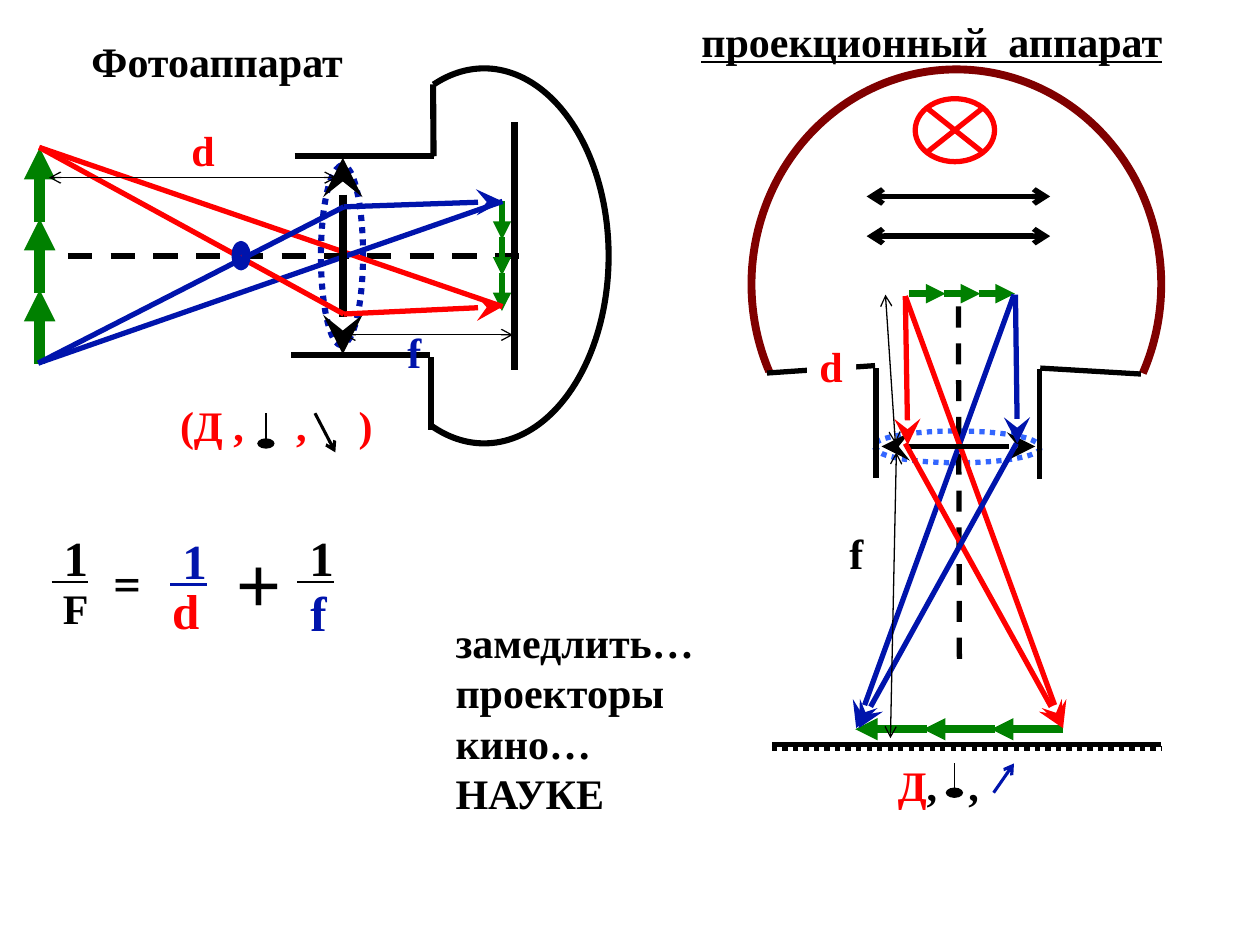
from dataclasses import dataclass
from math import atan2, cos, degrees, radians, sin

from lxml import etree
from pptx import Presentation
from pptx.dml.color import RGBColor
from pptx.enum.dml import MSO_LINE
from pptx.enum.shapes import MSO_CONNECTOR, MSO_SHAPE
from pptx.enum.text import MSO_ANCHOR, MSO_AUTO_SIZE, PP_ALIGN
from pptx.oxml.ns import qn
from pptx.util import Cm, Pt

BLACK = RGBColor(0x00, 0x00, 0x00)
WHITE = RGBColor(0xFF, 0xFF, 0xFF)
RED = RGBColor(0xFF, 0x00, 0x00)
BLUE = RGBColor(0x00, 0x14, 0xAC)
GREEN = RGBColor(0x00, 0x80, 0x00)
MAROON = RGBColor(0x80, 0x00, 0x00)
LIGHT_BLUE = RGBColor(0x33, 0x66, 0xFF)
DASH, DOT = MSO_LINE.DASH, MSO_LINE.ROUND_DOT
STRAIGHT = MSO_CONNECTOR.STRAIGHT
ARC, ELLIPSE = MSO_SHAPE.ARC, MSO_SHAPE.OVAL
LAMP = MSO_SHAPE.FLOWCHART_SUMMING_JUNCTION
TOP, LEFT, NO_AUTOFIT = MSO_ANCHOR.TOP, PP_ALIGN.LEFT, MSO_AUTO_SIZE.NONE

# Arrowheads as (type, width, length)
TRIANGLE = ("triangle", "med", "med")
OPEN = ("arrow", "med", "med")
STEALTH = ("stealth", "lg", "lg")
OVAL_END = ("oval", "lg", "med")
SERIF = {"name": "Times New Roman", "size": Pt(24), "bold": True}
ARC_UNITS_PER_DEGREE = 0.6


def style_line(line, color, width, dash=None):
    line.color.rgb = color
    line.width = Pt(width)
    if dash:
        line.dash_style = dash


def write(para, text, color=BLACK, **changes):
    span = para.add_run()
    span.text = text
    for key, value in {**SERIF, **changes}.items():
        setattr(span.font, key, value)
    span.font.color.rgb = color


def set_tabs(para, stops):
    tab_list = etree.SubElement(para._p.get_or_add_pPr(), qn("a:tabLst"))
    for stop in stops:
        etree.SubElement(tab_list, qn("a:tab"), pos=str(Cm(stop)), algn="l")


@dataclass
class Region:
    """A box on the page; its parts are placed in centimetres from its corner."""
    page: object
    left: float
    top: float

    def place(self, x, y):
        return Cm(self.left + x), Cm(self.top + y)

    def line(self, start, end, color, width, dash=None, head=None, tail=None):
        connector = self.page.shapes.add_connector(
            STRAIGHT, *self.place(*start), *self.place(*end))
        style_line(connector.line, color, width, dash)
        outline = connector.line._get_or_add_ln()
        for tag, arrow in (("a:headEnd", head), ("a:tailEnd", tail)):
            if arrow:
                kind, across, along = arrow
                etree.SubElement(outline, qn(tag), type=kind, w=across, len=along)
        etree.SubElement(connector._element.spPr, qn("a:effectLst"))

    def object_arrows(self, start, step, length, width):
        """Three green arrows in a row, each moved on by step."""
        for index in range(3):
            x, y = (start[axis] + index * step[axis] for axis in (0, 1))
            self.line((x, y), (x + length[0], y + length[1]),
                      GREEN, width, tail=TRIANGLE)

    def shape(self, kind, x, y, width, height, color, weight, fill=None, dash=None):
        shape = self.page.shapes.add_shape(
            kind, *self.place(x, y), Cm(width), Cm(height))
        shape.shadow.inherit = False
        if fill is None:
            shape.fill.background()
        else:
            shape.fill.solid()
            shape.fill.fore_color.rgb = fill
        style_line(shape.line, color, weight, dash)
        return shape

    def arc(self, centre, radii, angles, color, width, dash=None):
        """A clockwise arc; angles are parameters of the ellipse in degrees."""
        (x, y), (across, down) = centre, radii
        arc = self.shape(ARC, x - across, y - down, 2 * across, 2 * down,
                         color, width, dash=dash)
        for index, angle in enumerate(angles):
            turn = radians(angle)
            seen = degrees(atan2(down * sin(turn), across * cos(turn))) % 360
            arc.adjustments[index] = seen * ARC_UNITS_PER_DEGREE

    def label(self, x, y, text, color=BLACK, width=1.4, **changes):
        box = self.page.shapes.add_textbox(
            *self.place(x, y), Cm(width), Cm(1.27))
        box.text_frame.word_wrap = True
        write(box.text_frame.paragraphs[0], text, color, **changes)
        return box


def fill_placeholder(box, frame, lines):
    box.left, box.top, box.width, box.height = map(Cm, frame)
    text = box.text_frame
    text.auto_size, text.vertical_anchor, text.word_wrap = NO_AUTOFIT, TOP, True
    for index, line in enumerate(lines):
        para = text.add_paragraph() if index else text.paragraphs[0]
        para.alignment, para.space_before = LEFT, Pt(0)
        para.line_spacing = Pt(28.8)
        properties = para._p.get_or_add_pPr()
        properties.set("marL", "0")
        properties.set("indent", "0")
        etree.SubElement(properties, qn("a:buNone"))
        write(para, line)


def add_headings(page):
    title, body = page.placeholders
    fill_placeholder(title, (1.59, 0.58, 6.55, 1.27), ["Фотоаппарат"])
    fill_placeholder(body, (8.93, 12.3, 6.15, 5.38),
                     ["замедлить…", "проекторы", "кино…", "НАУКЕ"])
    Region(page, 13.89, 0.19).label(0, 0, "проекционный  аппарат",
                                    width=10.52, underline=True)


def add_camera(page, left, top):
    box = Region(page, left, top)
    box.arc((6.91, 4.13), (0.41, 1.8), (-104, 90), BLUE, 3.5, DOT)
    box.arc((6.88, 4.16), (0.41, 1.8), (90, 284), BLUE, 3.5, DOT)
    box.line((1.37, 4.16), (10.54, 4.16), BLACK, 3.5, DASH)
    box.object_arrows((0.8, 3.48), (0, 1.43), (0, -1.5), 6)
    box.object_arrows((10.12, 3.06), (0, 0.72), (0, 0.77), 3.5)

    far_top, far_bottom = (0.79, 1.97), (0.77, 6.32)
    image_top, image_bottom = (10.13, 3.06), (10.13, 5.18)
    box.line(far_top, image_bottom, RED, 3)
    box.line(far_bottom, image_top, BLUE, 3)
    for start, end in (((5.94, 2.15), (8.74, 2.15)), ((5.87, 6.16), (8.66, 6.16)),
                       ((8.74, 2.15), (8.73, 0.7)), ((8.69, 7.66), (8.69, 6.19))):
        box.line(start, end, BLACK, 3.5)
    box.arc((9.76, 4.16), (2.51, 3.78), (-114, 115), BLACK, 3.5)
    box.line((10.37, 1.47), (10.37, 6.46), BLACK, 4.25)
    box.line((6.91, 2.18), (6.91, 6.14), BLACK, 4.5, head=STEALTH, tail=STEALTH)
    for start, bend, end, color in ((far_top, (6.93, 5.33), image_bottom, RED),
                                    (far_bottom, (6.93, 3.17), image_top, BLUE)):
        box.line(start, bend, color, 3)
        box.line(bend, end, color, 3, tail=STEALTH)
    box.shape(ELLIPSE, 4.76, 3.95, 0.2, 0.41, BLUE, 5.25, fill=RED)

    box.line((0.99, 2.58), (6.78, 2.58), BLACK, 0.75, head=OPEN, tail=OPEN)
    box.line((6.93, 5.75), (10.34, 5.75), BLACK, 0.75, head=OPEN, tail=OPEN)
    box.label(3.61, 1.39, "d", RED)
    box.label(7.75, 5.45, " f", BLUE)
    note = box.label(3.38, 6.92, "(Д ,\t,\t)", RED, width=4.78)
    set_tabs(note.text_frame.paragraphs[0], (2.34, 3.6))
    box.line((5.36, 7.33), (5.36, 7.94), BLACK, 0.79, tail=OVAL_END)
    box.line((6.35, 7.33), (6.76, 8.12), BLACK, 1.75, tail=OPEN)


def add_projector(page, left, top):
    box = Region(page, left, top)
    box.arc((4.29, 5.73), (4.13, 4.33), (156, 384.5), MAROON, 4.5)
    box.arc((4.29, 8.99), (1.66, 0.3), (161, 360), LIGHT_BLUE, 3, DOT)
    box.arc((4.32, 9.03), (1.66, 0.3), (0, 199), LIGHT_BLUE, 3, DOT)
    box.object_arrows((3.34, 5.92), (0.7, 0), (0.73, 0), 3.75)
    box.line((4.35, 13.28), (4.33, 6.02), BLACK, 3, DASH)
    box.line((2.27, 14.68), (5.45, 5.94), BLUE, 3, head=STEALTH)
    box.line((6.44, 14.68), (3.26, 5.97), RED, 3, head=STEALTH)
    for start, end in (((2.67, 9.63), (2.67, 7.42)), ((5.96, 9.65), (5.96, 7.44)),
                       ((2.65, 7.37), (0.47, 7.52)), ((8.01, 7.54), (5.98, 7.42))):
        box.line(start, end, BLACK, 3)
    box.shape(LAMP, 3.46, 1.99, 1.6, 1.27, RED, 3, fill=WHITE)
    for y in (3.96, 4.76):
        box.line((2.48, y), (6.18, y), BLACK, 3, head=OPEN, tail=OPEN)
    box.object_arrows((6.44, 14.7), (-1.37, 0), (-1.45, 0), 4.25)
    box.line((0.57, 15.01), (8.42, 15.01), BLACK, 3)
    box.line((0.57, 15.09), (8.42, 15.09), BLACK, 3, DOT)

    box.line((5.88, 9), (2.78, 9), BLACK, 3.25, head=STEALTH, tail=STEALTH)
    for start, end, color in (((3.31, 8.97), (3.26, 5.97), RED),
                              ((5.52, 8.94), (5.48, 5.94), BLUE),
                              ((6.44, 14.68), (3.26, 8.94), RED),
                              ((2.32, 14.68), (5.5, 8.94), BLUE)):
        box.line(start, end, color, 3, head=STEALTH)

    note = box.label(2.86, 15.19, "Д", RED, width=3.76).text_frame.paragraphs[0]
    write(note, ",\t,")
    set_tabs(note, [1.42])
    box.line((5.04, 15.98), (5.45, 15.39), BLUE, 1.75, tail=OPEN)
    box.line((4.25, 15.39), (4.25, 15.98), BLACK, 0.79, tail=OVAL_END)
    box.label(1.67, 10.5, " f")
    box.line((2.96, 14.88), (3.08, 9.12), BLACK, 0.75, head=OPEN, tail=OPEN)
    box.line((3.06, 8.94), (2.86, 5.94), BLACK, 0.75, head=OPEN, tail=OPEN)
    distance = box.label(1.28, 6.74, "d", RED, width=0.99)
    distance.fill.solid()
    distance.fill.fore_color.rgb = WHITE


def add_lens_formula(page, left, top):
    box = Region(page, left, top)
    big = Pt(28)
    for x, y, color in ((0, 0.01, BLACK), (2.39, 0.06, BLUE), (4.95, 0.01, BLACK)):
        box.label(x, y, " 1", color, size=big, underline=True)
    box.label(0.02, 1.11, " F", width=1.6)
    box.label(2.43, 1.08, "d", RED, size=big)
    box.label(4.97, 1.11, " f", BLUE, width=1.6, size=big)
    box.label(1.24, 0.42, "=", width=1.63, name="Calibri", size=Pt(32), bold=False)
    box.label(3.73, 0.17, "+", width=1.63, name="Arial", size=Pt(44), bold=False)


def main():
    deck = Presentation()
    deck.slide_width, deck.slide_height = Cm(25.4), Cm(19.05)
    page = deck.slides.add_slide(deck.slide_layouts[1])
    add_headings(page)
    add_camera(page, 0, 1)
    add_projector(page, 14.99, 0)
    add_lens_formula(page, 0.79, 10.5)
    deck.save("out.pptx")


if __name__ == "__main__":
    main()
